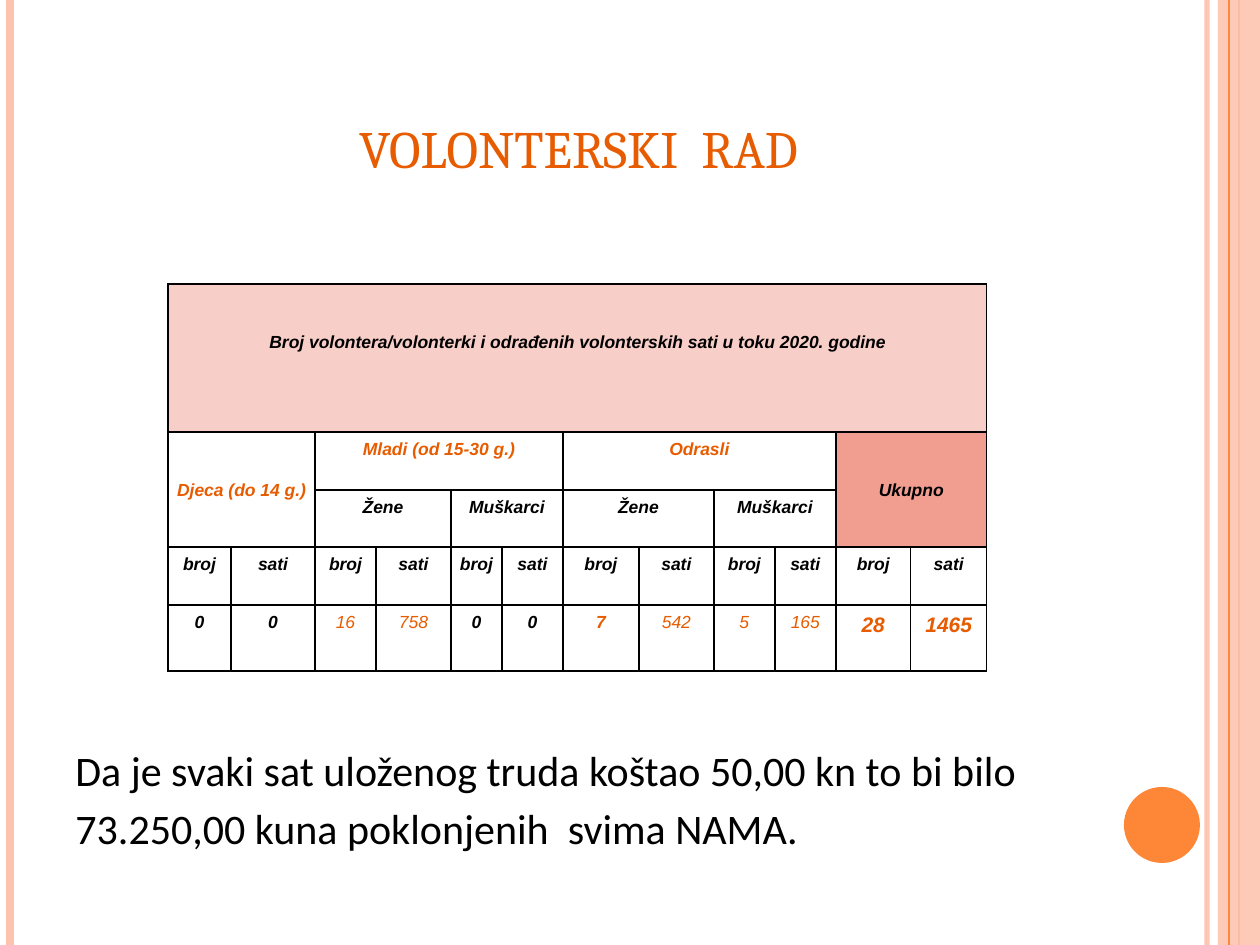
from lxml.etree import SubElement
from pptx import Presentation
from pptx.dml.color import RGBColor
from pptx.enum.shapes import MSO_CONNECTOR, MSO_SHAPE
from pptx.enum.text import MSO_ANCHOR, PP_ALIGN
from pptx.oxml import parse_xml
from pptx.oxml.ns import nsdecls, qn
from pptx.util import Pt

PX = 914400 / 126
WIDTH, HEIGHT = 1260, 945
BLACK = RGBColor(0x00, 0x00, 0x00)
ORANGE = RGBColor(0xFE, 0x86, 0x37)
DARK_ORANGE = RGBColor(0xE7, 0x5C, 0x01)
PEACH = RGBColor(0xFE, 0xC3, 0xAE)
PALE_PINK = RGBColor(0xF8, 0xCF, 0xC8)
PINK = RGBColor(0xF1, 0x9E, 0x91)


def px(*lengths):
    return [round(length * PX) for length in lengths]


def write_text(frame, text, font="Arial", size=10, color=BLACK, bold=False,
               italic=False, align=PP_ALIGN.CENTER, spacing=1.15, after=10):
    frame.word_wrap = True
    paragraph = frame.paragraphs[0]
    paragraph.alignment = align
    paragraph.line_spacing = spacing
    paragraph.space_after = Pt(after)
    run = paragraph.add_run()
    run.text = text
    run.font.name = font
    run.font.size = Pt(size)
    run.font.bold = bold
    run.font.italic = italic
    run.font.color.rgb = color


presentation = Presentation()
presentation.slide_width, presentation.slide_height = px(WIDTH, HEIGHT)
slide = presentation.slides.add_slide(presentation.slide_layouts[6])

# Side stripes, back to front; the band lies between the last two lines
for x, color, weight, opacity in [
    (1207, PEACH, 3, 93),
    (10, PEACH, 4.5, 100),
    (1239, ORANGE, 1.5, 100),
    (1218, PEACH, None, 87),
    (1229, ORANGE, 0.75, 100),
]:
    if weight is None:
        stripe = slide.shapes.add_shape(
            MSO_SHAPE.RECTANGLE, *px(x, 0, WIDTH - x, HEIGHT))
        stripe.shadow.inherit = False
        stripe.line.fill.background()
        fill = stripe.fill
    else:
        stripe = slide.shapes.add_connector(
            MSO_CONNECTOR.STRAIGHT, *px(x, 0, x, HEIGHT))
        stripe.line.width = Pt(weight)
        fill = stripe.line.fill
    fill.solid()
    fill.fore_color.rgb = color
    properties = stripe._element.spPr
    if weight is not None:
        SubElement(properties, qn("a:effectLst"))
    if opacity < 100:
        color_element = next(properties.iter(qn("a:srgbClr")))
        SubElement(color_element, qn("a:alpha"), val=str(opacity * 1000))

# Orange dot
dot = slide.shapes.add_shape(MSO_SHAPE.OVAL, *px(1124, 787, 76, 76))
dot.shadow.inherit = False
dot.fill.solid()
dot.fill.fore_color.rgb = ORANGE
dot.line.fill.background()

# Title
title = slide.shapes.add_textbox(*px(64, 28, 1029, 157))
title.text_frame.vertical_anchor = MSO_ANCHOR.BOTTOM
write_text(title.text_frame, "VOLONTERSKI  RAD", font="Cambria", size=30,
           color=DARK_ORANGE, spacing=1, after=0)

# Closing sentence
closing = slide.shapes.add_textbox(*px(63, 731, 1029, 161))
write_text(closing.text_frame,
           "Da je svaki sat uloženog truda koštao 50,00 kn to bi bilo "
           "73.250,00 kuna poklonjenih  svima NAMA.",
           font="Calibri", size=24, align=PP_ALIGN.LEFT)

# Table grid
column_widths = [63, 84, 61, 75, 51, 61, 76, 75, 61, 61, 75, 76]
row_heights = [148, 58, 57, 58, 66]
table_shape = slide.shapes.add_table(
    len(row_heights), len(column_widths),
    *px(168, 284, sum(column_widths), sum(row_heights)))
table = table_shape.table
table.first_row = table.horz_banding = False
for column, width in zip(table.columns, px(*column_widths)):
    column.width = width
for row, height in zip(table.rows, px(*row_heights)):
    row.height = height
for cell in table.iter_cells():
    cell.margin_left = cell.margin_right = 0
    cell.margin_top, cell.margin_bottom = px(5, 5)
    cell_properties = cell._tc.get_or_add_tcPr()
    for side in ("lnL", "lnR", "lnT", "lnB"):
        cell_properties.append(parse_xml(
            f'<a:{side} {nsdecls("a")} w="12700"><a:solidFill>'
            f'<a:srgbClr val="{BLACK}"/></a:solidFill></a:{side}>'))
    cell.fill.background()

# Headings: row, column, row span, column span, text, colour, fill
headings = [
    (0, 0, 1, 12, "Broj volontera/volonterki i odrađenih volonterskih sati "
                  "u toku 2020. godine", BLACK, PALE_PINK),
    (1, 0, 2, 2, "Djeca (do 14 g.)", DARK_ORANGE, None),
    (1, 2, 1, 4, "Mladi (od 15-30 g.)", DARK_ORANGE, None),
    (1, 6, 1, 4, "Odrasli", DARK_ORANGE, None),
    (1, 10, 2, 2, "Ukupno", BLACK, PINK),
]
for column, text in zip(range(2, 10, 2), ["Žene", "Muškarci"] * 2):
    headings.append((2, column, 1, 2, text, BLACK, None))
for row, column, row_span, column_span, text, color, fill_color in headings:
    cell = table.cell(row, column)
    cell.merge(table.cell(row + row_span - 1, column + column_span - 1))
    if row_span > 1:
        cell.vertical_anchor = MSO_ANCHOR.MIDDLE
    if fill_color is not None:
        cell.fill.solid()
        cell.fill.fore_color.rgb = fill_color
    write_text(cell.text_frame, text, color=color, bold=True, italic=True)
table.cell(0, 0).margin_top = px(46)[0]

# Counts and hours
values = ["0", "0", "16", "758", "0", "0", "7", "542", "5", "165", "28", "1465"]
for column, value in enumerate(values):
    write_text(table.cell(3, column).text_frame, ("broj", "sati")[column % 2],
               bold=True, italic=True)
    write_text(table.cell(4, column).text_frame, value,
               size=12 if column >= 10 else 10,
               color=BLACK if value == "0" else DARK_ORANGE,
               bold=value not in ("16", "758", "542", "5", "165"), italic=True)

presentation.save("out.pptx")
